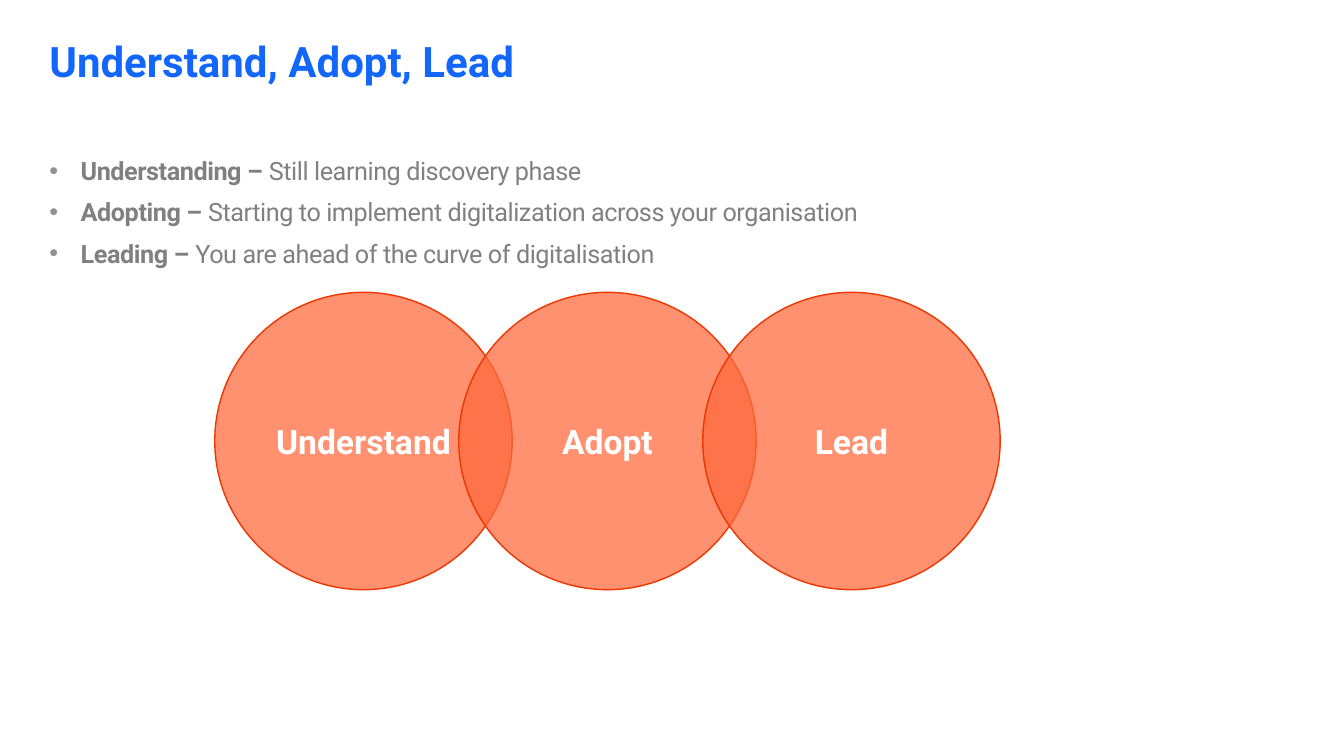
import pptx
import pptx.dml.color
import pptx.enum.shapes
import pptx.enum.text
import pptx.oxml.ns
import pptx.util
from lxml import etree

Inches = pptx.util.Inches
Pt = pptx.util.Pt
RGBColor = pptx.dml.color.RGBColor
PP_ALIGN = pptx.enum.text.PP_ALIGN
MSO_ANCHOR = pptx.enum.text.MSO_ANCHOR
qn = pptx.oxml.ns.qn

BLUE = RGBColor(0x12, 0x66, 0xFA)
GREY = RGBColor(0x80, 0x80, 0x80)
BULLET_GREY = RGBColor(0x91, 0x91, 0x91)
CORAL = RGBColor(0xFF, 0x69, 0x3C)
DARK_ORANGE = RGBColor(0xEC, 0x37, 0x00)
WHITE = RGBColor(0xFF, 0xFF, 0xFF)

PHASES = [
    ("Understanding – ", "Still learning discovery phase"),
    ("Adopting – ", "Starting to implement digitalization across your organisation"),
    ("Leading – ", "You are ahead of the curve of digitalisation"),
]
STAGES = ["Understand", "Adopt", "Lead"]


def add_text(paragraph, text, *, size, color, bold=False, spacing=0, font="Roboto"):
    """Append a formatted run; spacing is the letter spacing in points."""
    run = paragraph.add_run()
    run.text = text
    run.font.name = font
    run.font.size = Pt(size)
    run.font.bold = bold
    run.font.color.rgb = color
    if spacing:
        run.font._element.set("spc", str(round(spacing * 100)))


def add_bullet(paragraph, color, indent):
    properties = paragraph._p.get_or_add_pPr()
    properties.set("marL", str(indent))
    properties.set("indent", str(-indent))
    bullet_color = etree.SubElement(properties, qn("a:buClr"))
    etree.SubElement(bullet_color, qn("a:srgbClr"), val=str(color))
    etree.SubElement(properties, qn("a:buFont"), typeface="Arial")
    etree.SubElement(properties, qn("a:buChar"), char="•")


class SlideBuilder:
    margin = Inches(0.49)
    content_width = Inches(12.35)

    def __init__(self, presentation):
        self.slide = presentation.slides.add_slide(presentation.slide_layouts[1])

    def place(self, placeholder, top, height, anchor):
        """Position a placeholder at the margin and return its text frame without insets."""
        placeholder.left, placeholder.top = self.margin, top
        placeholder.width, placeholder.height = self.content_width, height
        frame = placeholder.text_frame
        frame.margin_left = frame.margin_right = 0
        frame.margin_top = frame.margin_bottom = 0
        frame.word_wrap = True
        frame.auto_size = pptx.enum.text.MSO_AUTO_SIZE.NONE
        frame.vertical_anchor = anchor
        return frame

    def title(self, text):
        frame = self.place(self.slide.shapes.title, Inches(0.31), Inches(0.59), MSO_ANCHOR.MIDDLE)
        heading = frame.paragraphs[0]
        heading.alignment = PP_ALIGN.LEFT
        add_text(heading, text, size=30, color=BLUE, bold=True)

    def definitions(self, phases):
        frame = self.place(self.slide.placeholders[1], Inches(1.54), Inches(5.46), MSO_ANCHOR.TOP)
        for index, (term, meaning) in enumerate(phases):
            definition = frame.add_paragraph() if index else frame.paragraphs[0]
            add_bullet(definition, BULLET_GREY, Inches(0.31))
            definition.space_before = Pt(0)
            definition.space_after = Pt(8)
            add_text(definition, term, size=18, color=GREY, bold=True, spacing=-0.3)
            add_text(definition, meaning, size=18, color=GREY, spacing=-0.3)

    def circle(self, label, left, top, diameter):
        circle = self.slide.shapes.add_shape(
            pptx.enum.shapes.MSO_SHAPE.OVAL, left, top, diameter, diameter)
        circle.shadow.inherit = False
        circle.fill.solid()
        circle.fill.fore_color.rgb = CORAL
        fill_color = circle._element.spPr.find(qn("a:solidFill")).find(qn("a:srgbClr"))
        etree.SubElement(fill_color, qn("a:alpha"), val="73000")
        circle.line.color.rgb = DARK_ORANGE
        circle.line.width = Pt(1)
        circle.text_frame.vertical_anchor = MSO_ANCHOR.MIDDLE
        caption = circle.text_frame.paragraphs[0]
        caption.alignment = PP_ALIGN.CENTER
        add_text(caption, label, size=24, color=WHITE, bold=True)

    def overlapping_circles(self, labels):
        for index, label in enumerate(labels):
            self.circle(label, Inches(2.13 + 2.42 * index), Inches(2.9), Inches(2.95))


def main():
    presentation = pptx.Presentation()
    presentation.slide_width = Inches(13.33)
    presentation.slide_height = Inches(7.5)
    builder = SlideBuilder(presentation)
    builder.title("Understand, Adopt, Lead")
    builder.definitions(PHASES)
    builder.overlapping_circles(STAGES)
    presentation.save("out.pptx")


if __name__ == "__main__":
    main()
